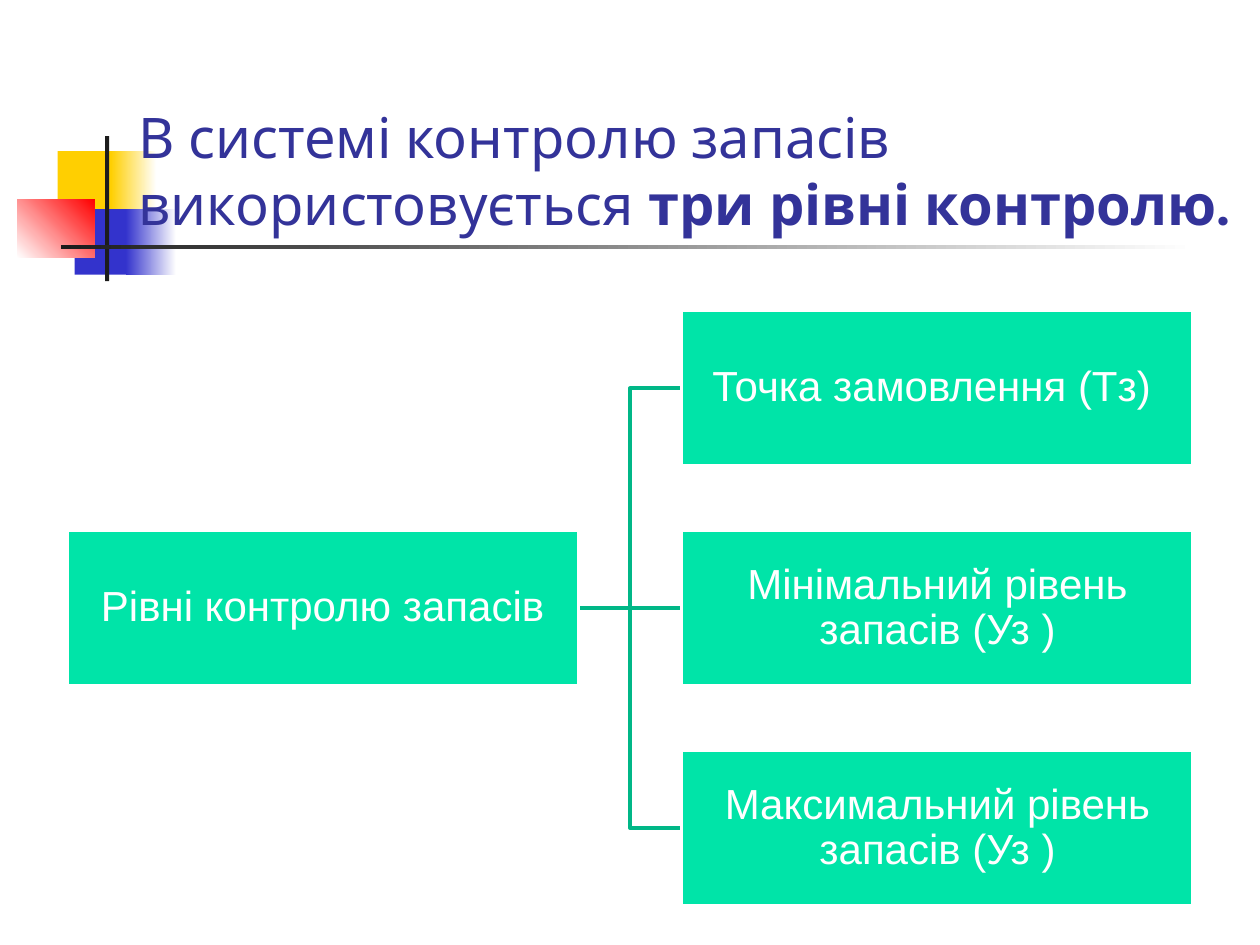
from dataclasses import dataclass
from typing import Optional

import pptx
import pptx.dml.color
import pptx.enum.shapes
import pptx.enum.text
import pptx.util

Pt = pptx.util.Pt

COLORS = {
    "yellow": "FFCF01",
    "blue": "3333CC",
    "red": "FF0000",
    "ink": "1C1C1C",
    "white": "FFFFFF",
    "title": "333399",
    "box": "00E4A8",
    "branch": "00B787",
}

# Tree layout in points
BOX_WIDTH, BOX_HEIGHT = 292.3, 89.2
ROOT_LEFT, LEVEL_LEFT = 38.2, 389.6
MIDDLE_Y, LEVEL_PITCH = 347.5, 125.7


@dataclass
class Ornament:
    left: float
    top: float
    width: float
    height: float
    color: str
    fade_to: Optional[str] = None
    angle: float = 0


@dataclass
class Box:
    text: str
    left: float
    center_y: float


ORNAMENTS = [
    Ornament(33, 86.4, 34.8, 37.4, "yellow"),
    Ornament(63.4, 86.4, 26, 37.4, "yellow", "white"),
    Ornament(42.6, 119.5, 33, 37.4, "blue"),
    Ornament(72, 119.5, 28.6, 37.4, "blue", "white"),
    Ornament(9.8, 113.8, 44.2, 33.4, "white", "red", 45),
    Ornament(60, 77.8, 2.4, 82.8, "ink"),
    Ornament(34.8, 140, 648, 2.5, "ink", "white"),
]

LEVELS = ["Точка замовлення (Тз) ", "Мінімальний рівень запасів (Уз )",
          "Максимальний рівень запасів (Уз )"]


def rgb(name: str) -> pptx.dml.color.RGBColor:
    return pptx.dml.color.RGBColor.from_string(COLORS[name])


def add_rectangle(slide, left: float, top: float, width: float, height: float):
    rectangle = slide.shapes.add_shape(
        pptx.enum.shapes.MSO_SHAPE.RECTANGLE, Pt(left), Pt(top), Pt(width), Pt(height))
    rectangle.shadow.inherit = False
    return rectangle


def draw_ornament(slide, item: Ornament) -> None:
    block = add_rectangle(slide, item.left, item.top, item.width, item.height)
    block.line.fill.background()
    if item.fade_to is None:
        block.fill.solid()
        block.fill.fore_color.rgb = rgb(item.color)
        return
    block.fill.gradient()
    block.fill.gradient_angle = item.angle
    for stop, name in zip(block.fill.gradient_stops, (item.color, item.fade_to)):
        stop.color.rgb = rgb(name)


def draw_branch(slide, start: Box, end: Box) -> None:
    start_x = start.left + BOX_WIDTH
    bend_x = (start_x + end.left) / 2
    points = [(bend_x, start.center_y), (bend_x, end.center_y), (end.left, end.center_y)]
    if start.center_y == end.center_y:
        points = points[-1:]
    builder = slide.shapes.build_freeform(Pt(start_x), Pt(start.center_y))
    builder.add_line_segments([(Pt(x), Pt(y)) for x, y in points], close=False)
    branch = builder.convert_to_shape()
    branch.shadow.inherit = False
    branch.fill.background()
    branch.line.color.rgb = rgb("branch")
    branch.line.width = Pt(2)


def draw_box(slide, box: Box) -> None:
    panel = add_rectangle(slide, box.left, box.center_y - BOX_HEIGHT / 2,
                          BOX_WIDTH, BOX_HEIGHT)
    panel.fill.solid()
    panel.fill.fore_color.rgb = rgb("box")
    panel.line.color.rgb = rgb("white")
    panel.line.width = Pt(2)
    frame = panel.text_frame
    frame.word_wrap = True
    frame.vertical_anchor = pptx.enum.text.MSO_ANCHOR.MIDDLE
    frame.margin_left = frame.margin_right = Pt(1.2)
    frame.margin_top = frame.margin_bottom = Pt(1.2)
    paragraph = frame.paragraphs[0]
    paragraph.alignment = pptx.enum.text.PP_ALIGN.CENTER
    paragraph.line_spacing = 0.9
    add_run(paragraph, box.text, "Arial", 24, "white")


def add_run(paragraph, text: str, font: str, size: float, color: str,
            bold: bool = False) -> None:
    run = paragraph.add_run()
    run.text = text
    run.font.name = font
    run.font.size = Pt(size)
    run.font.bold = bold
    run.font.color.rgb = rgb(color)


def fill_title(slide) -> None:
    title = slide.shapes.title
    title.left, title.top, title.width, title.height = Pt(72), Pt(54.7), Pt(648), Pt(84.3)
    frame = title.text_frame
    frame.word_wrap = True
    frame.auto_size = pptx.enum.text.MSO_AUTO_SIZE.NONE
    frame.vertical_anchor = pptx.enum.text.MSO_ANCHOR.BOTTOM
    paragraph = frame.paragraphs[0]
    paragraph.alignment = pptx.enum.text.PP_ALIGN.LEFT
    add_run(paragraph, "В системі контролю запасів використовується", "Karla", 32, "title")
    add_run(paragraph, " три рівні контролю.", "Karla", 32, "title", bold=True)
    # Bring the title in front of the ornaments
    slide.shapes._spTree.append(title._element)


def main() -> None:
    deck = pptx.Presentation()
    deck.slide_width, deck.slide_height = Pt(720), Pt(540)
    slide = deck.slides.add_slide(deck.slide_layouts.get_by_name("Title Only"))

    # Corner ornaments and title
    for item in ORNAMENTS:
        draw_ornament(slide, item)
    fill_title(slide)

    # Tree: branches first, boxes over them
    root = Box("Рівні контролю запасів", ROOT_LEFT, MIDDLE_Y)
    levels = [Box(text, LEVEL_LEFT, MIDDLE_Y + (row - 1) * LEVEL_PITCH)
              for row, text in enumerate(LEVELS)]
    for level in levels:
        draw_branch(slide, root, level)
    for box in [root, *levels]:
        draw_box(slide, box)

    deck.save("out.pptx")


if __name__ == "__main__":
    main()
